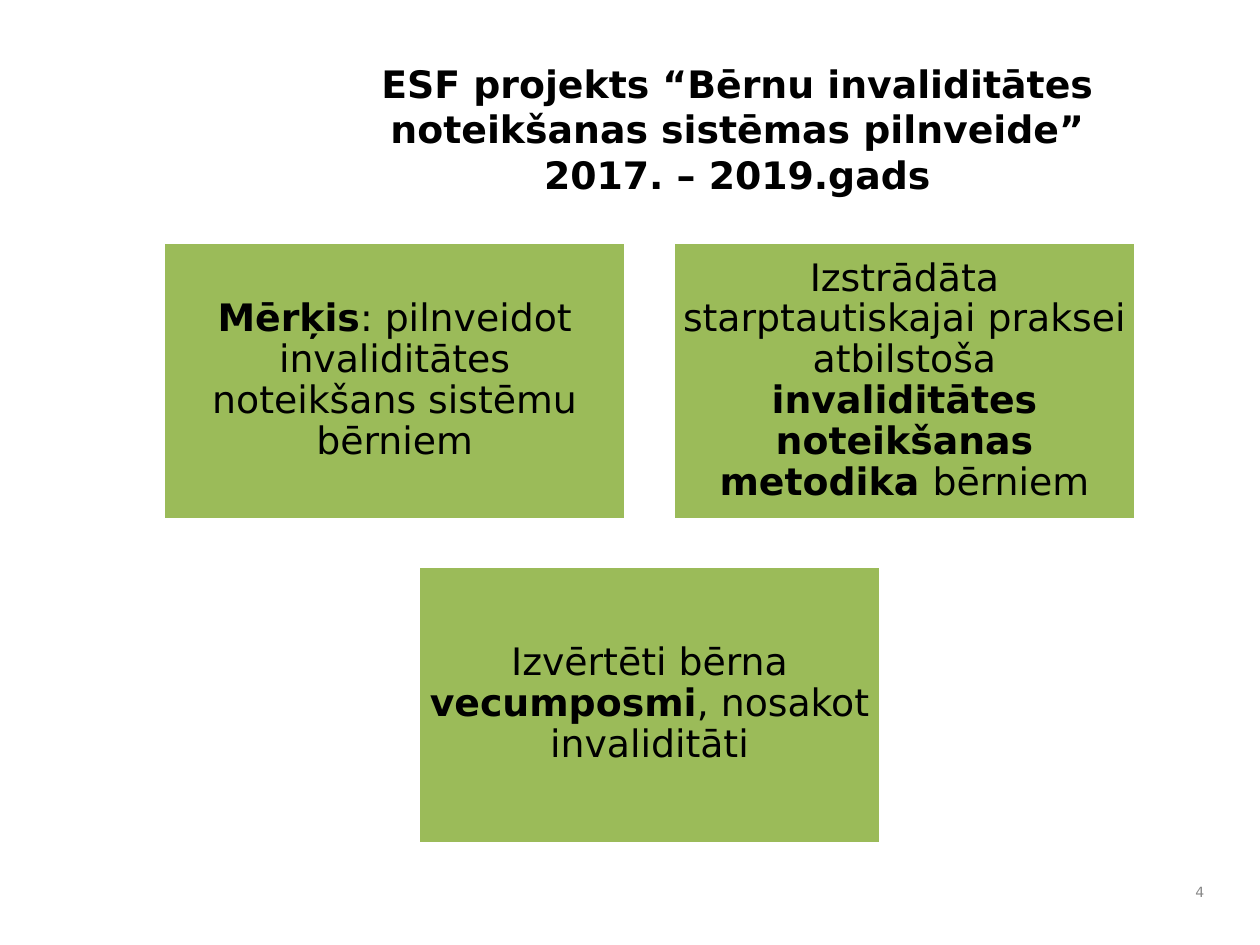
import pptx
import pptx.dml.color
import pptx.enum.shapes
import pptx.enum.text
import pptx.util

Inches = pptx.util.Inches
Pt = pptx.util.Pt
RGBColor = pptx.dml.color.RGBColor
ALIGN = pptx.enum.text.PP_ALIGN
ANCHOR = pptx.enum.text.MSO_ANCHOR

BLACK = RGBColor(0x00, 0x00, 0x00)
WHITE = RGBColor(0xFF, 0xFF, 0xFF)
GREEN = RGBColor(0x9B, 0xBB, 0x59)
GREY = RGBColor(0x89, 0x89, 0x89)
FONT = "DejaVu Sans"

CARD_WIDTH, CARD_HEIGHT = 3.06, 1.84
CARDS_LEFT, CARDS_TOP = 1.08, 1.6
STEP_X, STEP_Y = 3.37, 2.14

# Column, row and (text, bold) runs of each card
CARDS = [
    (0, 0, [("Mērķis", True),
            (": pilnveidot invaliditātes noteikšans sistēmu bērniem", False)]),
    (1, 0, [("Izstrādāta starptautiskajai praksei atbilstoša ", False),
            ("invaliditātes noteikšanas metodika ", True),
            ("bērniem", False)]),
    (0.5, 1, [("Izvērtēti bērna ", False),
              ("vecumposmi", True),
              (", nosakot invaliditāti", False)]),
]


def add_run(paragraph, text, size=18, bold=False, color=BLACK):
    run = paragraph.add_run()
    run.text = text
    run.font.name = FONT
    run.font.size = Pt(size)
    run.font.bold = bold
    run.font.color.rgb = color


def set_frame(frame, anchor, inset_x=0.1, inset_y=0.05):
    frame.word_wrap = True
    frame.auto_size = pptx.enum.text.MSO_AUTO_SIZE.NONE
    frame.vertical_anchor = anchor
    frame.margin_left = frame.margin_right = Inches(inset_x)
    frame.margin_top = frame.margin_bottom = Inches(inset_y)


def add_title(slide):
    title = slide.shapes.title
    title.left, title.top = Inches(1.84), Inches(0.35)
    title.width, title.height = Inches(6.07), Inches(0.94)
    set_frame(title.text_frame, ANCHOR.TOP)
    heading = title.text_frame.paragraphs[0]
    heading.alignment = ALIGN.CENTER
    add_run(heading, "ESF projekts “Bērnu invaliditātes noteikšanas sistēmas pilnveide”", bold=True)
    heading.add_line_break()
    add_run(heading, "2017. – 2019.gads", bold=True)


def add_card(slide, column, row, runs):
    card = slide.shapes.add_shape(
        pptx.enum.shapes.MSO_SHAPE.RECTANGLE,
        Inches(CARDS_LEFT + column * STEP_X), Inches(CARDS_TOP + row * STEP_Y),
        Inches(CARD_WIDTH), Inches(CARD_HEIGHT))
    card.shadow.inherit = False
    card.fill.solid()
    card.fill.fore_color.rgb = GREEN
    card.line.color.rgb = WHITE
    card.line.width = Pt(2)
    set_frame(card.text_frame, ANCHOR.MIDDLE, 0.06, 0.07)
    statement = card.text_frame.paragraphs[0]
    statement.alignment = ALIGN.CENTER
    statement.line_spacing = 0.9
    for text, bold in runs:
        add_run(statement, text, bold=bold)


def add_page_number(slide, number):
    box = slide.shapes.add_textbox(Inches(7.78), Inches(5.76), Inches(0.28), Inches(0.28))
    set_frame(box.text_frame, ANCHOR.MIDDLE)
    page = box.text_frame.paragraphs[0]
    page.alignment = ALIGN.RIGHT
    add_run(page, number, size=6.7, color=GREY)


def main():
    deck = pptx.Presentation()
    deck.slide_width, deck.slide_height = Inches(8.33), Inches(6.25)
    slide = deck.slides.add_slide(deck.slide_layouts.get_by_name("Title Only"))

    add_title(slide)
    # Two cards above, one centred below
    for column, row, runs in CARDS:
        add_card(slide, column, row, runs)
    add_page_number(slide, "4")

    deck.save("out.pptx")


if __name__ == "__main__":
    main()
